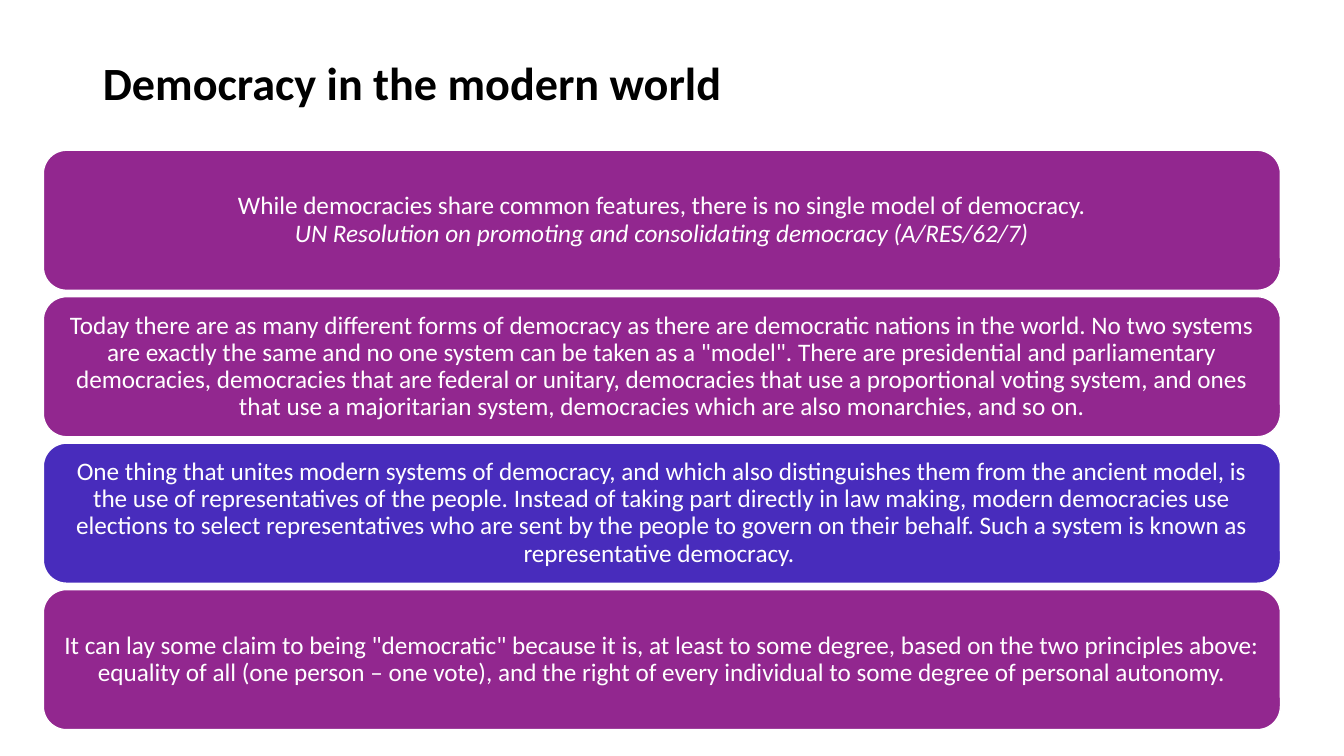
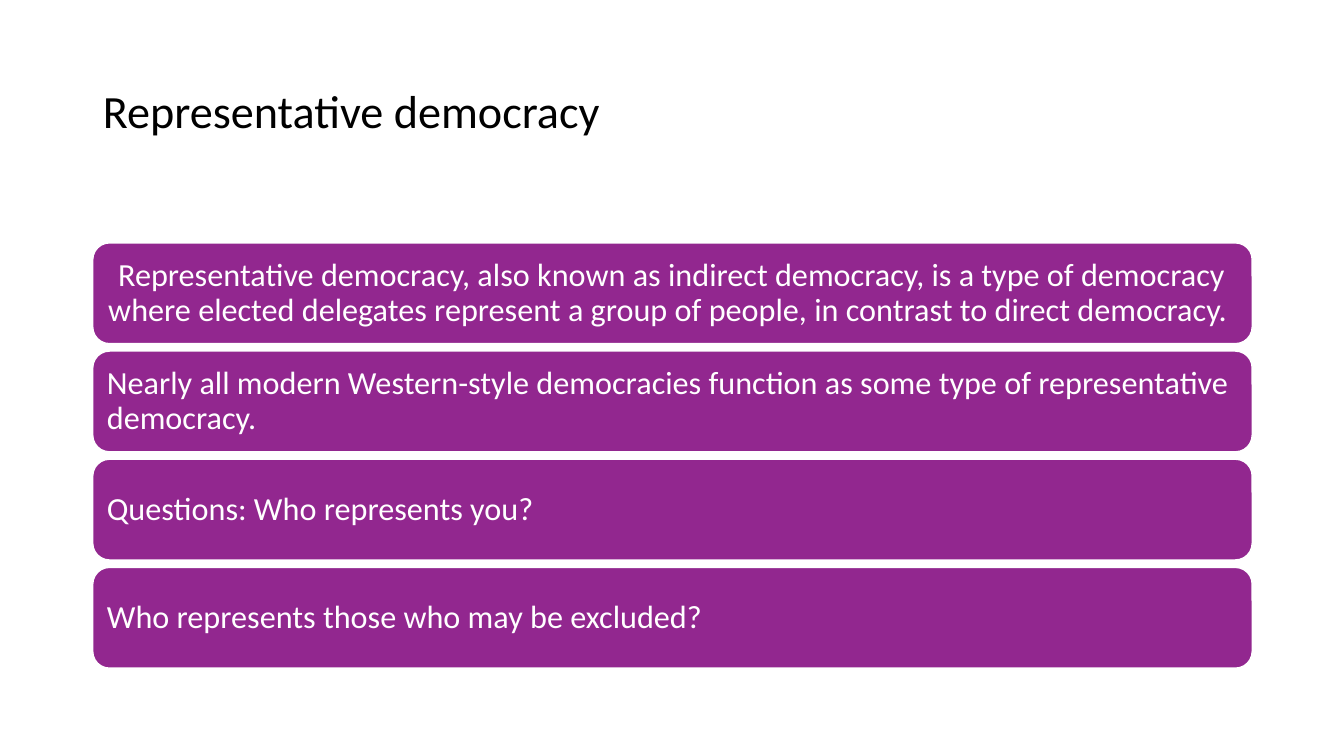
from pptx import Presentation
from pptx.dml.color import RGBColor
from pptx.enum.shapes import MSO_SHAPE
from pptx.enum.text import MSO_ANCHOR, MSO_AUTO_SIZE, PP_ALIGN
from pptx.util import Inches, Pt

FONT = "Calibri"
BLACK, WHITE, PURPLE, BLUE = "000000", "FFFFFF", "92278F", "482CBC"
LEFT, CENTER = PP_ALIGN.LEFT, PP_ALIGN.CENTER
CORNER = 1 / 6  # corner radius as a share of the band height
PADDING = 0.14


def write_text(paragraph, text, *, size, color=WHITE, align=LEFT, bold=False, italic=False):
    paragraph.alignment = align
    paragraph.line_spacing = 0.9
    paragraph.space_before = paragraph.space_after = Pt(0)
    run = paragraph.add_run()
    run.text = text
    run.font.name = FONT
    run.font.size = Pt(size)
    run.font.bold = bold
    run.font.italic = italic
    run.font.color.rgb = RGBColor.from_string(color)


# Each band: fill, alignment, lines of text (lines after the first are italic).
SLIDES = [
    {
        "title": "Democracy in the modern world", "bold": True, "title_height": 0.89,
        "left": 0.43, "top": 1.49, "width": 12.27, "height": 1.39, "pitch": 1.453, "size": 18,
        "bands": [
            (PURPLE, CENTER, [
                "While democracies share common features, there is no single model of democracy.",
                "UN Resolution on promoting and consolidating democracy (A/RES/62/7)"]),
            (PURPLE, CENTER, [
                "Today there are as many different forms of democracy as there are democratic "
                "nations in the world. No two systems are exactly the same and no one system can "
                "be taken as a \"model\". There are presidential and parliamentary democracies, "
                "democracies that are federal or unitary, democracies that use a proportional "
                "voting system, and ones that use a majoritarian system, democracies which are "
                "also monarchies, and so on."]),
            (BLUE, CENTER, [
                "One thing that unites modern systems of democracy, and which also distinguishes "
                "them from the ancient model, is the use of representatives of the people. "
                "Instead of taking part directly in law making, modern democracies use elections "
                "to select representatives who are sent by the people to govern on their behalf. "
                "Such a system is known as representative democracy. "]),
            (PURPLE, CENTER, [
                "It can lay some claim to being \"democratic\" because it is, at least to some "
                "degree, based on the two principles above: equality of all (one person – one "
                "vote), and the right of every individual to some degree of personal autonomy."]),
        ],
    },
    {
        "title": "Representative democracy", "bold": False, "title_height": 1.45,
        "left": 0.92, "top": 2.41, "width": 11.5, "height": 1, "pitch": 1.073, "size": 23,
        "bands": [
            (PURPLE, CENTER, [
                "Representative democracy, also known as indirect democracy, is a type of "
                "democracy where elected delegates represent a group of people, in contrast to "
                "direct democracy. "]),
            (PURPLE, LEFT, [
                "Nearly all modern Western-style democracies function as some type of "
                "representative democracy."]),
            (PURPLE, LEFT, ["Questions: Who represents you?"]),
            (PURPLE, LEFT, ["Who represents those who may be excluded?"]),
        ],
    },
]

presentation = Presentation()
presentation.slide_width = Inches(13.33)
presentation.slide_height = Inches(7.5)
title_only = presentation.slide_layouts[5]

for content in SLIDES:
    slide = presentation.slides.add_slide(title_only)
    title = slide.shapes.title
    title.left, title.top = Inches(0.92), Inches(0.4)
    title.width, title.height = Inches(11.5), Inches(content["title_height"])
    title.text_frame.vertical_anchor = MSO_ANCHOR.MIDDLE
    title.text_frame.auto_size = MSO_AUTO_SIZE.NONE
    write_text(title.text_frame.paragraphs[0], content["title"],
               size=33, color=BLACK, bold=content["bold"])

    # A rounded rectangle already insets its text by 0.29 of the corner radius.
    margin = Inches(PADDING - 0.29 * CORNER * content["height"])
    for index, (fill, align, lines) in enumerate(content["bands"]):
        band = slide.shapes.add_shape(
            MSO_SHAPE.ROUNDED_RECTANGLE,
            Inches(content["left"]), Inches(content["top"] + index * content["pitch"]),
            Inches(content["width"]), Inches(content["height"]))
        band.adjustments[0] = CORNER
        band.shadow.inherit = False
        band.fill.solid()
        band.fill.fore_color.rgb = RGBColor.from_string(fill)
        band.line.color.rgb = RGBColor.from_string(WHITE)
        band.line.width = Pt(1)

        frame = band.text_frame
        frame.word_wrap = True
        frame.vertical_anchor = MSO_ANCHOR.MIDDLE
        frame.margin_left = frame.margin_right = margin
        frame.margin_top = frame.margin_bottom = margin
        for number, line in enumerate(lines):
            paragraph = frame.add_paragraph() if number else frame.paragraphs[0]
            write_text(paragraph, line, size=content["size"], align=align, italic=number > 0)

presentation.save("out.pptx")
